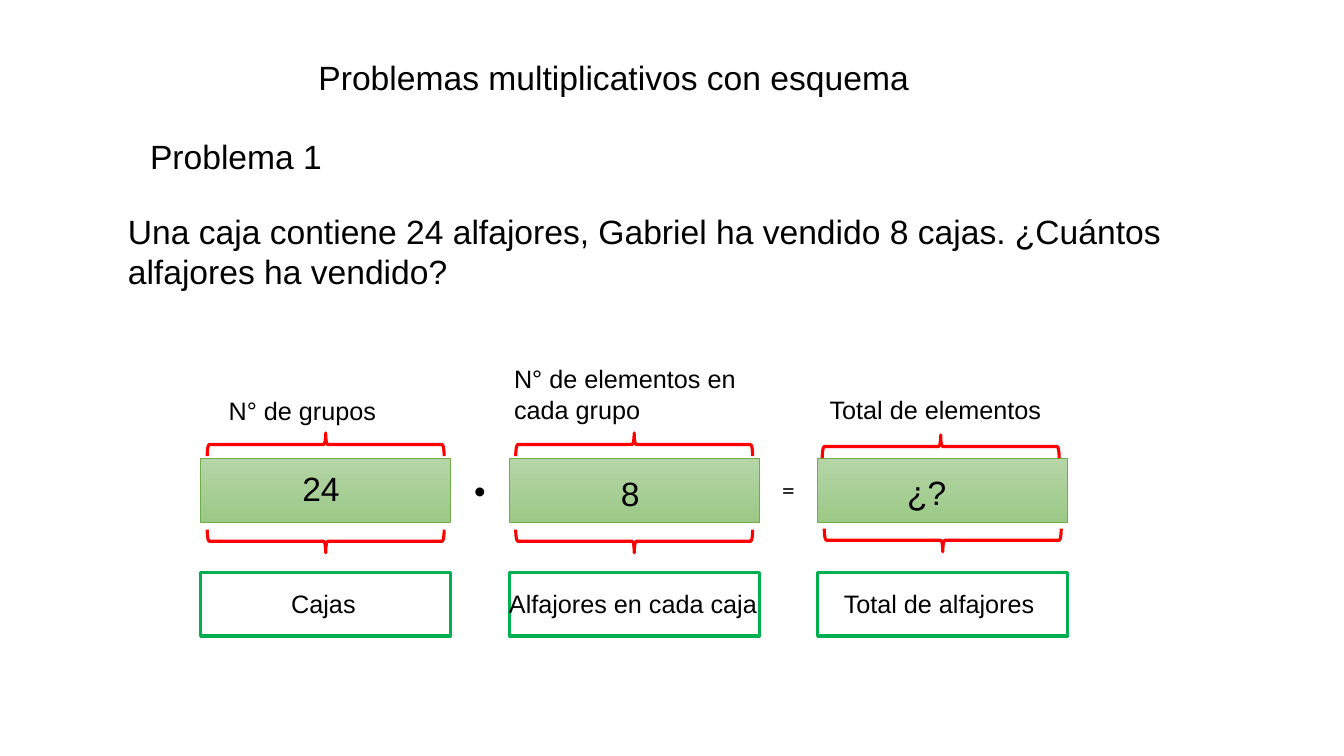
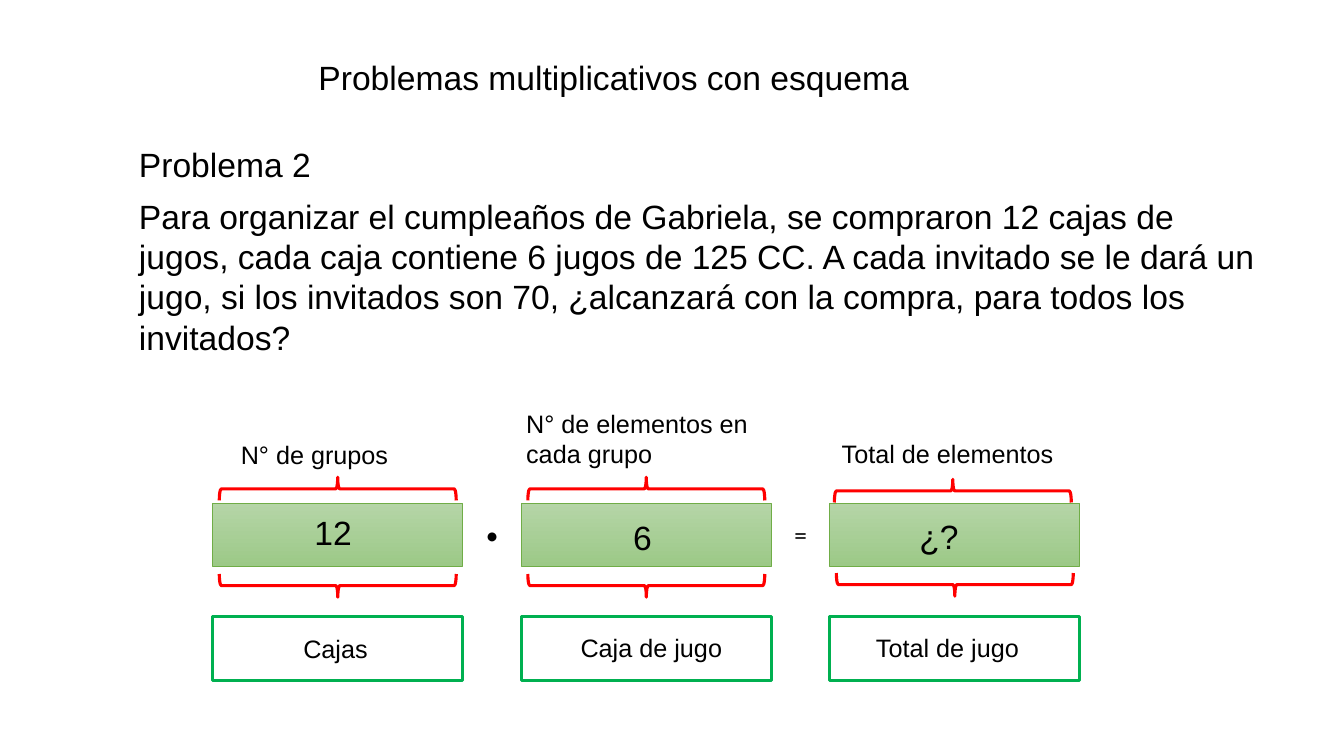
from pptx import Presentation
from pptx.dml.color import RGBColor
from pptx.enum.shapes import MSO_SHAPE
from pptx.enum.text import MSO_AUTO_SIZE, PP_ALIGN
from pptx.util import Inches, Pt

COLORS = {
    "ink": "000000", "white": "FFFFFF", "brace": "FF0000", "frame": "00B050",
    "edge": "70AD47", "light": "B5D5A7", "deep": "9CC987",
}
TITLE = "Problemas multiplicativos con esquema"
PITCH, WIDE, HIGH = 3.06, 2.48, 0.63
HEADS = [
    ("N° de grupos", 0.18, -0.68, 1.96),
    ("N° de elementos en cada grupo", -0.05, -0.99, 2.58),
    ("Total de elementos", 0.02, -0.69, 2.58),
]
SPOTS = [(0.91, 0.04, 0.66), (1.01, 0.09, 0.39), (0.79, 0.08, 0.87)]
BRACES = [
    ((1.24, -0.14), (1.24, 0.82)),
    ((1.24, -0.14), (1.24, 0.82)),
    ((1.22, -0.12), (1.24, 0.81)),
]
TASKS = [
    {
        "head": ("Problema 1", 1.39, 1.3, 1.96),
        "body": ("Una caja contiene 24 alfajores, Gabriel ha vendido 8 cajas. "
                 "¿Cuántos alfajores ha vendido?", 1.17, 2.04, 11.07),
        "at": (1.99, 4.55),
        "values": ["24", "8", "¿?"],
        "names": [("Cajas", 0.8, 1.24, 0.87),
                  ("Alfajores en cada caja", -0.1, 1.24, 2.67),
                  ("Total de alfajores", 0.16, 1.24, 2.22)],
    },
    {
        "head": ("Problema 2", 1.28, 1.38, 1.96),
        "body": ("Para organizar el cumpleaños de Gabriela, se compraron 12 cajas "
                 "de jugos, cada caja contiene 6 jugos de 125 CC. A cada invitado "
                 "se le dará un jugo, si los invitados son 70, ¿alcanzará con la "
                 "compra, para todos los invitados?", 1.28, 1.89, 11.39),
        "at": (2.11, 4.99),
        "values": ["12", "6", "¿?"],
        "names": [("Cajas", 0.8, 1.24, 0.87),
                  ("Caja de jugo", 0.49, 1.23, 1.77),
                  ("Total de jugo", 0.36, 1.23, 1.73)],
    },
]


def color(name):
    """Return a named colour."""
    return RGBColor.from_string(COLORS[name])


def label(slide, text, x, y, w, size=18, font="Arial", align=PP_ALIGN.LEFT):
    """Place one wrapped text that grows with its content."""
    box = slide.shapes.add_textbox(Inches(x), Inches(y), Inches(w),
                                   Inches(0.5 if size > 18 else 0.4))
    frame = box.text_frame
    frame.word_wrap = True
    frame.auto_size = MSO_AUTO_SIZE.SHAPE_TO_FIT_TEXT
    para = frame.paragraphs[0]
    para.alignment = align
    run = para.add_run()
    run.text = text
    run.font.name = font
    run.font.size = Pt(size)
    run.font.color.rgb = color("ink")


def shape(slide, kind, x, y, w, h, line, weight):
    """Place an outlined shape without shadow or fill."""
    item = slide.shapes.add_shape(kind, Inches(x), Inches(y), Inches(w), Inches(h))
    item.shadow.inherit = False
    item.fill.background()
    item.line.color.rgb = color(line)
    item.line.width = Pt(weight)
    return item


def block(slide, x, y):
    """Draw the green value box."""
    box = shape(slide, MSO_SHAPE.RECTANGLE, x, y, WIDE, HIGH, "edge", 0.5)
    box.fill.gradient()
    box.fill.gradient_angle = 270
    for stop, name in zip(box.fill.gradient_stops, ("light", "deep")):
        stop.color.rgb = color(name)


def brace(slide, x, y, turn):
    """Draw a horizontal brace centred on a point."""
    thick, span = 0.23, 2.35
    item = shape(slide, MSO_SHAPE.RIGHT_BRACE, x - thick / 2, y - span / 2,
                 thick, span, "brace", 2.25)
    item.rotation = turn


def column(slide, x, y, head, value, spot, name, braces):
    """Draw one part of the scheme from its value box's top left corner."""
    block(slide, x, y)
    for (dx, dy), turn in zip(braces, (270, 90)):
        brace(slide, x + dx, y + dy, turn)
    card = shape(slide, MSO_SHAPE.RECTANGLE, x, y + 1.13, WIDE, HIGH, "frame", 2.25)
    card.fill.solid()
    card.fill.fore_color.rgb = color("white")
    for text, dx, dy, w in (head, name):
        label(slide, text, x + dx, y + dy, w)
    dx, dy, w = spot
    label(slide, value, x + dx, y + dy, w, 24)


def scheme(slide, x, y, values, names):
    """Draw the three columns and the signs between them."""
    parts = zip(HEADS, values, SPOTS, names, BRACES)
    for i, part in enumerate(parts):
        column(slide, x + i * PITCH, y, *part)
    for i, sign in enumerate("•="):
        label(slide, sign, x + i * PITCH + 2.58, y + 0.11, 0.38,
              font="Calibri", align=PP_ALIGN.CENTER)


def problem(deck, task):
    """Add one problem slide."""
    slide = deck.slides.add_slide(deck.slide_layouts[6])
    for item in ((TITLE, 3.06, 0.52, 6.12), task["head"], task["body"]):
        label(slide, *item, size=24)
    scheme(slide, *task["at"], task["values"], task["names"])


def main():
    """Build and save the deck."""
    deck = Presentation()
    deck.slide_width, deck.slide_height = Inches(13.33), Inches(7.5)
    for task in TASKS:
        problem(deck, task)
    deck.save("out.pptx")


if __name__ == "__main__":
    main()
